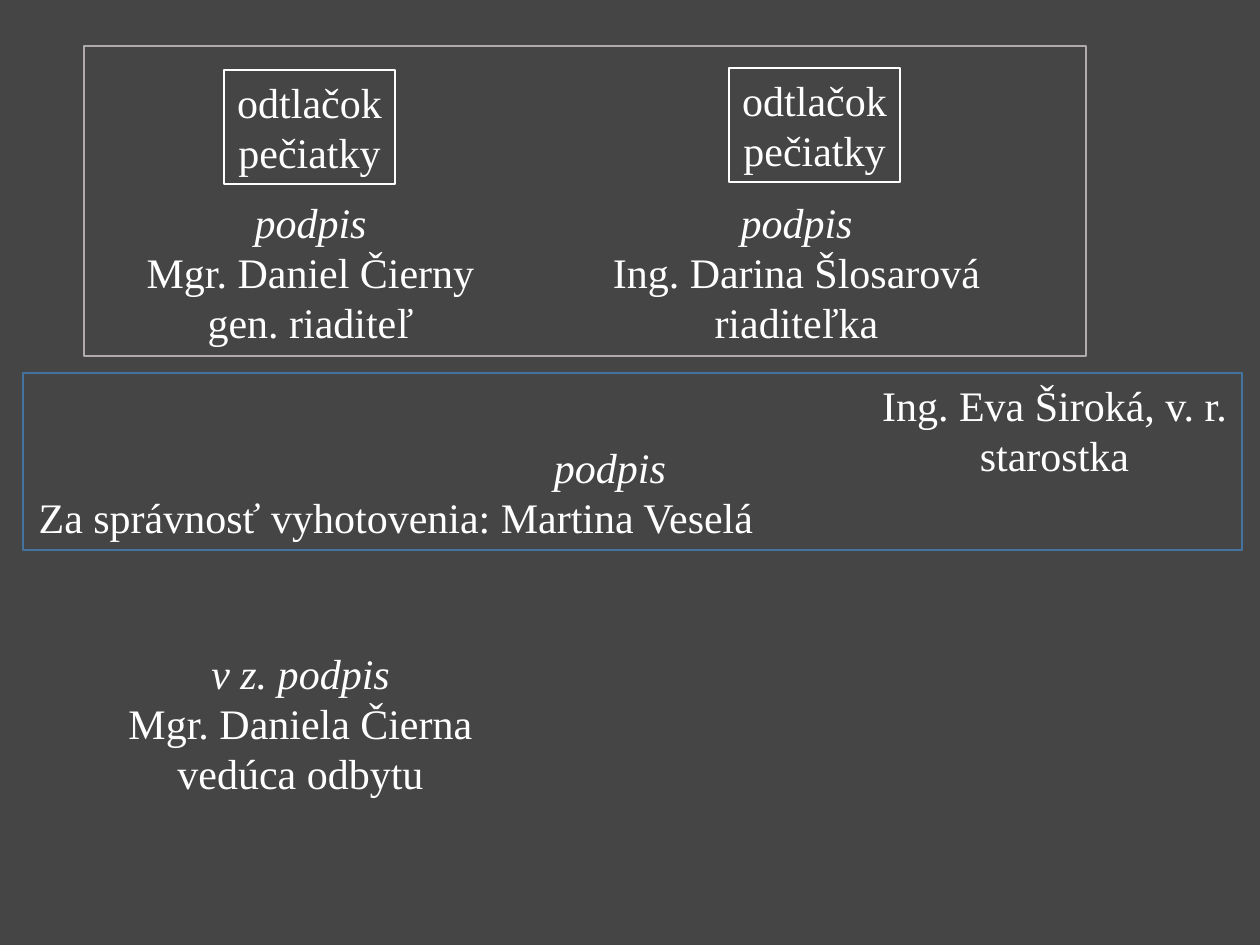
"""Build a slide showing how signatures are laid out on official letters."""
from pptx import Presentation
from pptx.dml.color import RGBColor
from pptx.enum.shapes import MSO_SHAPE
from pptx.enum.text import MSO_ANCHOR, PP_ALIGN
from pptx.util import Emu, Pt

PX_PER_INCH = 126
BACKGROUND = RGBColor(0x45, 0x45, 0x45)
WHITE = RGBColor(0xFF, 0xFF, 0xFF)
BLUE = RGBColor(0x43, 0x73, 0x9E)
GREY = RGBColor(0xAF, 0xAB, 0xAB)
FONT = "Times New Roman"
STAMP_LINES = ["odtlačok", "pečiatky"]


def px(length):
    return Emu(round(length * 914400 / PX_PER_INCH))


def write_lines(shape, lines, signed=False, indent=0):
    frame = shape.text_frame
    frame.word_wrap = indent > 0
    frame.vertical_anchor = MSO_ANCHOR.TOP
    for index, line in enumerate(lines):
        paragraph = frame.paragraphs[0] if index == 0 else frame.add_paragraph()
        paragraph.alignment = PP_ALIGN.CENTER
        if index == 0 and indent:
            paragraph._p.get_or_add_pPr().set("marL", str(px(indent)))
        run = paragraph.add_run()
        run.text = line
        run.font.name = FONT
        run.font.size = Pt(24)
        run.font.color.rgb = WHITE
        run.font.italic = signed and index == 0


def add_frame(slide, box, color, width):
    shape = slide.shapes.add_shape(MSO_SHAPE.RECTANGLE, *map(px, box))
    shape.shadow.inherit = False
    shape.fill.background()
    shape.line.color.rgb = color
    shape.line.width = Pt(width)
    return shape


def add_stamp(slide, left, top):
    write_lines(add_frame(slide, (left, top, 171, 114), WHITE, 0.75), STAMP_LINES)


def add_signature(slide, box, lines, signed=True, indent=0):
    write_lines(slide.shapes.add_textbox(*map(px, box)), lines, signed, indent)


def main():
    presentation = Presentation()
    presentation.slide_width, presentation.slide_height = px(1260), px(945)
    slide = presentation.slides.add_slide(presentation.slide_layouts[6])
    slide.background.fill.solid()
    slide.background.fill.fore_color.rgb = BACKGROUND

    add_signature(slide, (132, 190, 357, 165),
                  ["podpis", "Mgr. Daniel Čierny", "gen. riaditeľ"])
    add_stamp(slide, 224, 70)
    add_stamp(slide, 729, 68)
    add_signature(slide, (598, 190, 397, 165),
                  ["podpis", "Ing. Darina Šlosarová", "riaditeľka"])
    add_signature(slide, (868, 373, 373, 114),
                  ["Ing. Eva Široká, v. r.", "starostka"], signed=False)
    add_signature(slide, (23, 435, 746, 114),
                  ["podpis", "Za správnosť vyhotovenia: Martina Veselá"], indent=428)
    add_frame(slide, (23, 373, 1219, 177), BLUE, 1)
    add_frame(slide, (84, 46, 1002, 310), GREY, 1)
    add_signature(slide, (114, 641, 373, 165),
                  ["v z. podpis", "Mgr. Daniela Čierna", "vedúca odbytu"])
    presentation.save("out.pptx")


if __name__ == "__main__":
    main()
